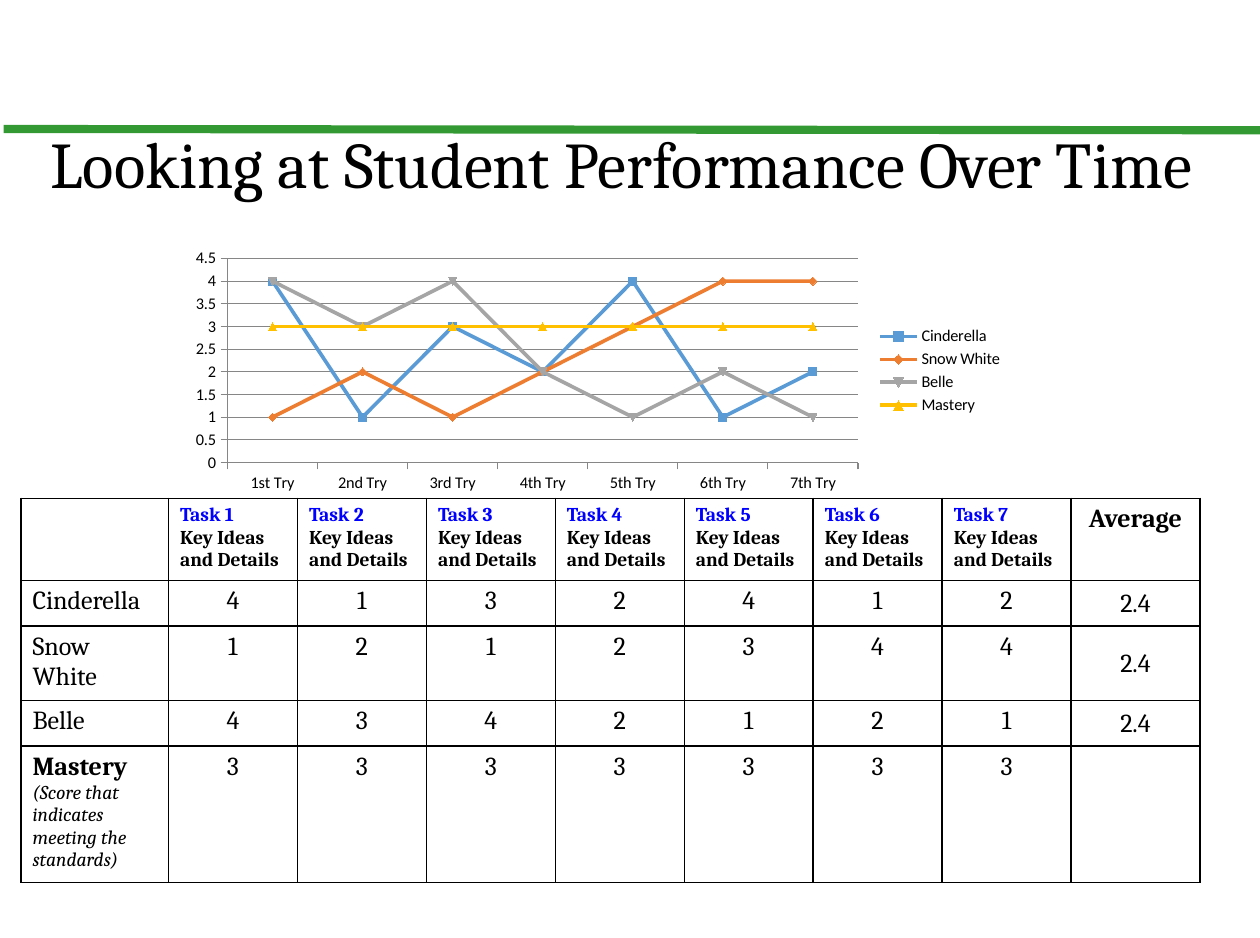
from dataclasses import dataclass

from lxml import etree
from pptx import Presentation
from pptx import util as u
from pptx.chart import data as chart_data
from pptx.dml.color import RGBColor
from pptx.enum import chart as chart_enum
from pptx.enum import shapes, text
from pptx.oxml import ns

Pt = u.Pt


@dataclass(frozen=True)
class Theme:
    serif: str = "Cambria"
    sans: str = "Calibri"
    title_size: float = 40
    body_size: float = 16
    small_size: float = 12
    chart_size: float = 10
    black: str = "000000"
    white: str = "FFFFFF"
    green: str = "339933"
    task_blue: str = "0000FF"
    grid_gray: str = "868686"
    series: tuple = ("5B9BD5", "ED7D31", "A5A5A5", "FFC000")


THEME = Theme()
SCORES = {
    "Cinderella": (4, 1, 3, 2, 4, 1, 2),
    "Snow White": (1, 2, 1, 2, 3, 4, 4),
    "Belle": (4, 3, 4, 2, 1, 2, 1),
    "Mastery": (3,) * 7,
}
TRIES = ("1st", "2nd", "3rd", "4th", "5th", "6th", "7th")
AVERAGE = "2.4"


def color(value):
    return RGBColor.from_string(value)


def add_run(paragraph, words, size=THEME.body_size, fill=THEME.black, bold=False, italic=False):
    run = paragraph.add_run()
    run.text = words
    font = run.font
    font.name, font.size, font.bold, font.italic = THEME.serif, Pt(size), bold, italic
    font.color.rgb = color(fill)


def add_rule(slide):
    line = slide.shapes.add_connector(
        shapes.MSO_CONNECTOR.STRAIGHT, Pt(2.2), Pt(79.2), Pt(774), Pt(80)
    )
    line.line.color.rgb = color(THEME.green)
    line.line.width = Pt(5)
    etree.SubElement(line._element.spPr, ns.qn("a:effectLst"))


def add_title(slide, words):
    box = slide.shapes.add_textbox(Pt(0), Pt(72), Pt(763), Pt(85))
    box.text_frame.word_wrap = True
    paragraph = box.text_frame.paragraphs[0]
    paragraph.alignment = text.PP_ALIGN.CENTER
    add_run(paragraph, words, THEME.title_size)


def style_cell(cell):
    """Give the cell a thin black border on all sides and a white fill."""
    properties = cell._tc.get_or_add_tcPr()
    for side in ("lnL", "lnR", "lnT", "lnB"):
        border = etree.SubElement(properties, ns.qn(f"a:{side}"), w=str(Pt(1)))
        fill = etree.SubElement(border, ns.qn("a:solidFill"))
        etree.SubElement(fill, ns.qn("a:srgbClr"), val=THEME.black)
    cell.fill.solid()
    cell.fill.fore_color.rgb = color(THEME.white)


def write_centered(cell, words, bold=False):
    paragraph = cell.text_frame.paragraphs[0]
    paragraph.alignment = text.PP_ALIGN.CENTER
    add_run(paragraph, words, bold=bold)


def write_task(cell, number):
    frame = cell.text_frame
    add_run(frame.paragraphs[0], f"Task {number}", THEME.small_size, THEME.task_blue, bold=True)
    add_run(frame.add_paragraph(), "Key Ideas and Details", THEME.small_size, bold=True)


def write_average(cell):
    cell.vertical_anchor = text.MSO_ANCHOR.MIDDLE
    cell.margin_left = cell.margin_right = cell.margin_top = Pt(0.75)
    cell.margin_bottom = Pt(0)
    write_centered(cell, AVERAGE)


def write_name(cell, name):
    paragraph = cell.text_frame.paragraphs[0]
    if name == "Mastery":
        add_run(paragraph, "Mastery ", bold=True)
        add_run(paragraph, "(Score that indicates meeting the standards)",
                THEME.small_size, italic=True)
    else:
        add_run(paragraph, name)


def add_score_table(slide):
    widths = [90.7] + [79.2] * (len(TRIES) + 1)
    heights = [34] + [28] * len(SCORES)
    table = slide.shapes.add_table(
        len(heights), len(widths), Pt(12.8), Pt(306), Pt(sum(widths)), Pt(sum(heights))
    ).table
    table.first_row = table.horz_banding = False
    for column, width in zip(table.columns, widths):
        column.width = Pt(width)
    for row, height in zip(table.rows, heights):
        row.height = Pt(height)
    for cell in table.iter_cells():
        style_cell(cell)

    last = len(widths) - 1
    for number in range(1, last):
        write_task(table.cell(0, number), number)
    write_centered(table.cell(0, last), "Average", bold=True)
    for row, (name, scores) in enumerate(SCORES.items(), 1):
        write_name(table.cell(row, 0), name)
        for column, score in enumerate(scores, 1):
            write_centered(table.cell(row, column), str(score))
        if name != "Mastery":
            write_average(table.cell(row, last))


def add_score_chart(slide):
    data = chart_data.CategoryChartData()
    data.categories = [f"{attempt} Try" for attempt in TRIES]
    for name, scores in SCORES.items():
        data.add_series(name, scores)
    chart = slide.shapes.add_chart(
        chart_enum.XL_CHART_TYPE.LINE_MARKERS, Pt(110), Pt(150), Pt(513.5), Pt(155.5), data
    ).chart
    chart.has_title = False
    chart.font.name = THEME.sans
    chart.font.size = Pt(THEME.chart_size)
    chart.font.color.rgb = color(THEME.black)
    chart.has_legend = True
    chart.legend.position = chart_enum.XL_LEGEND_POSITION.RIGHT
    chart.legend.include_in_layout = False

    for axis in (chart.category_axis, chart.value_axis):
        axis.major_tick_mark = chart_enum.XL_TICK_MARK.OUTSIDE
        axis.format.line.color.rgb = color(THEME.grid_gray)
    values = chart.value_axis
    values.minimum_scale, values.maximum_scale, values.major_unit = 0, 4.5, 0.5
    values.has_major_gridlines = True
    values.major_gridlines.format.line.color.rgb = color(THEME.grid_gray)

    chart.plots[0].vary_by_categories = False
    for series, value in zip(chart.plots[0].series, THEME.series):
        series.smooth = False
        series.format.line.color.rgb = color(value)
        series.format.line.width = Pt(2.25)
        series.marker.format.fill.solid()
        series.marker.format.fill.fore_color.rgb = color(value)
        series.marker.format.line.color.rgb = color(value)


def main():
    presentation = Presentation()
    presentation.slide_width, presentation.slide_height = Pt(774), Pt(576)
    slide = presentation.slides.add_slide(presentation.slide_layouts[6])
    add_rule(slide)
    add_title(slide, "Looking at Student Performance Over Time")
    add_score_table(slide)
    add_score_chart(slide)
    presentation.save("out.pptx")


if __name__ == "__main__":
    main()
